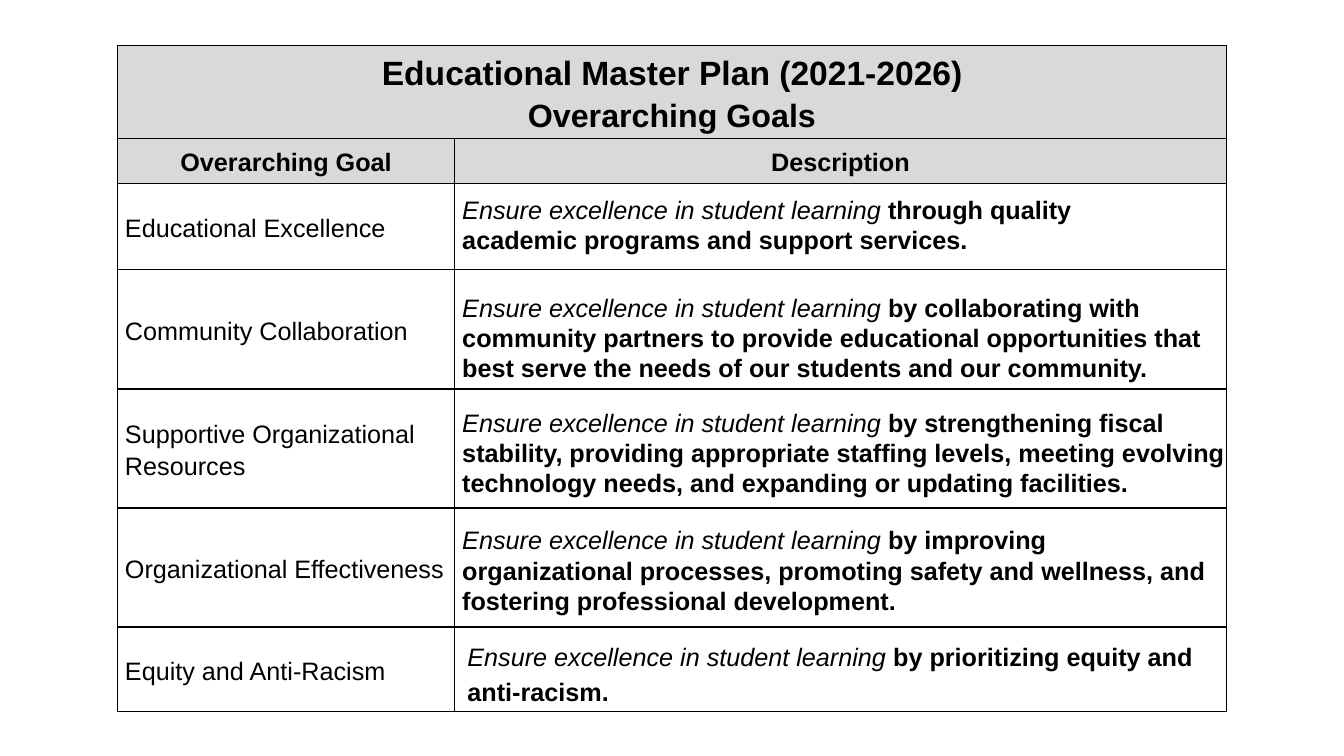
from lxml import etree
from pptx import Presentation
from pptx import util as u
from pptx.dml.color import RGBColor
from pptx.enum import text as t
from pptx.oxml import ns

BLACK, GREY = "000000", "D9D9D9"
HEAD = "Educational Master Plan (2021-2026)\nOverarching Goals"
LEAD = "Ensure excellence in student learning "
COLS = [8.48, 19.46]
ROWS = [2.36, 1.12, 2.18, 3, 3, 3, 2.13]

# Goal, description, then its box: shift from the cell corner, width, height
GOALS = [
    ("Educational Excellence",
     "through quality academic programs and support services.",
     (-0.05, 0.15, 18.69, 1.8)),
    ("Community Collaboration",
     "by collaborating with community partners to provide educational "
     "opportunities that best serve the needs of our students and our "
     "community.",
     (-0.05, 0.43, 19.43, 2.57)),
    ("Supportive Organizational Resources",
     "by strengthening fiscal stability, providing appropriate staffing "
     "levels, meeting evolving technology needs, and expanding or updating "
     "facilities.",
     (-0.05, 0.33, 19.94, 2.57)),
    ("Organizational Effectiveness",
     "by improving organizational processes, promoting safety and wellness, "
     "and fostering professional development.",
     (-0.05, 0.3, 19.43, 2.57)),
    ("Equity and Anti-Racism",
     "by prioritizing equity and\nanti-racism.",
     (0.08, 0.13, 19.18, 1.96)),
]


def color(code):
    return RGBColor.from_string(code)


def style(run, size=18, bold=False, slant=False):
    font = run.font
    font.name, font.size = "Arial", u.Pt(size)
    font.bold, font.italic = bold, slant
    font.color.rgb = color(BLACK)


def border(cell):
    props = cell._tc.get_or_add_tcPr()
    for i, side in enumerate(("lnL", "lnR", "lnT", "lnB")):
        line = etree.Element(ns.qn("a:" + side), w=str(u.Pt(1)))
        fill = etree.SubElement(line, ns.qn("a:solidFill"))
        etree.SubElement(fill, ns.qn("a:srgbClr"), val=BLACK)
        props.insert(i, line)


def write(cell, words, sizes=(18,), head=False):
    cell.text_frame.text = words
    for para, size in zip(cell.text_frame.paragraphs, sizes):
        para.line_spacing = 1.15
        para.alignment = t.PP_ALIGN.CENTER if head else t.PP_ALIGN.LEFT
        for run in para.runs:
            style(run, size, bold=head)


def goal_table(slide, left, top):
    """Grid with the two heading rows and the goal names."""
    table = slide.shapes.add_table(
        len(ROWS), len(COLS), u.Cm(left), u.Cm(top),
        u.Cm(sum(COLS)), u.Cm(sum(ROWS))).table
    table.first_row = table.horz_banding = False
    for col, wide in zip(table.columns, COLS):
        col.width = u.Cm(wide)
    for i, (row, high) in enumerate(zip(table.rows, ROWS)):
        row.height = u.Cm(high)
        for cell in row.cells:
            cell.margin_left = cell.margin_right = u.Cm(0.18)
            cell.margin_top = cell.margin_bottom = 0
            cell.vertical_anchor = t.MSO_ANCHOR.MIDDLE
            border(cell)
            if i < 2:
                cell.fill.solid()
                cell.fill.fore_color.rgb = color(GREY)
            else:
                cell.fill.background()
    # Headings
    table.cell(0, 0).merge(table.cell(0, 1))
    write(table.cell(0, 0), HEAD, (24, 23), head=True)
    for j, name in enumerate(("Overarching Goal", "Description")):
        write(table.cell(1, j), name, head=True)
    # Goal names
    for i, goal in enumerate(GOALS, 2):
        write(table.cell(i, 0), goal[0])


def detail(slide, left, top, wide, high, words):
    """Description: italic lead followed by bold text."""
    frame = slide.shapes.add_textbox(
        u.Cm(left), u.Cm(top), u.Cm(wide), u.Cm(high)).text_frame
    split = "\n" in words
    frame.word_wrap = not split
    frame.auto_size = t.MSO_AUTO_SIZE.SHAPE_TO_FIT_TEXT
    first, *rest = words.split("\n")
    frame.text = "\n".join([LEAD, *rest])
    frame.paragraphs[0].add_run().text = first
    for para in frame.paragraphs:
        if split:
            para.line_spacing = 1.15
        for run in para.runs:
            lead = run.text == LEAD
            style(run, bold=not lead, slant=lead)


def plan_slide(deck, left, top):
    slide = deck.slides.add_slide(deck.slide_layouts[6])
    goal_table(slide, left, top)
    for i, (_, words, (dx, dy, wide, high)) in enumerate(GOALS, 2):
        detail(slide, left + COLS[0] + dx, top + sum(ROWS[:i]) + dy,
               wide, high, words)


def main():
    deck = Presentation()
    deck.slide_width, deck.slide_height = u.Cm(33.87), u.Cm(19.05)
    plan_slide(deck, 2.97, 1.14)
    deck.save("out.pptx")


if __name__ == "__main__":
    main()
